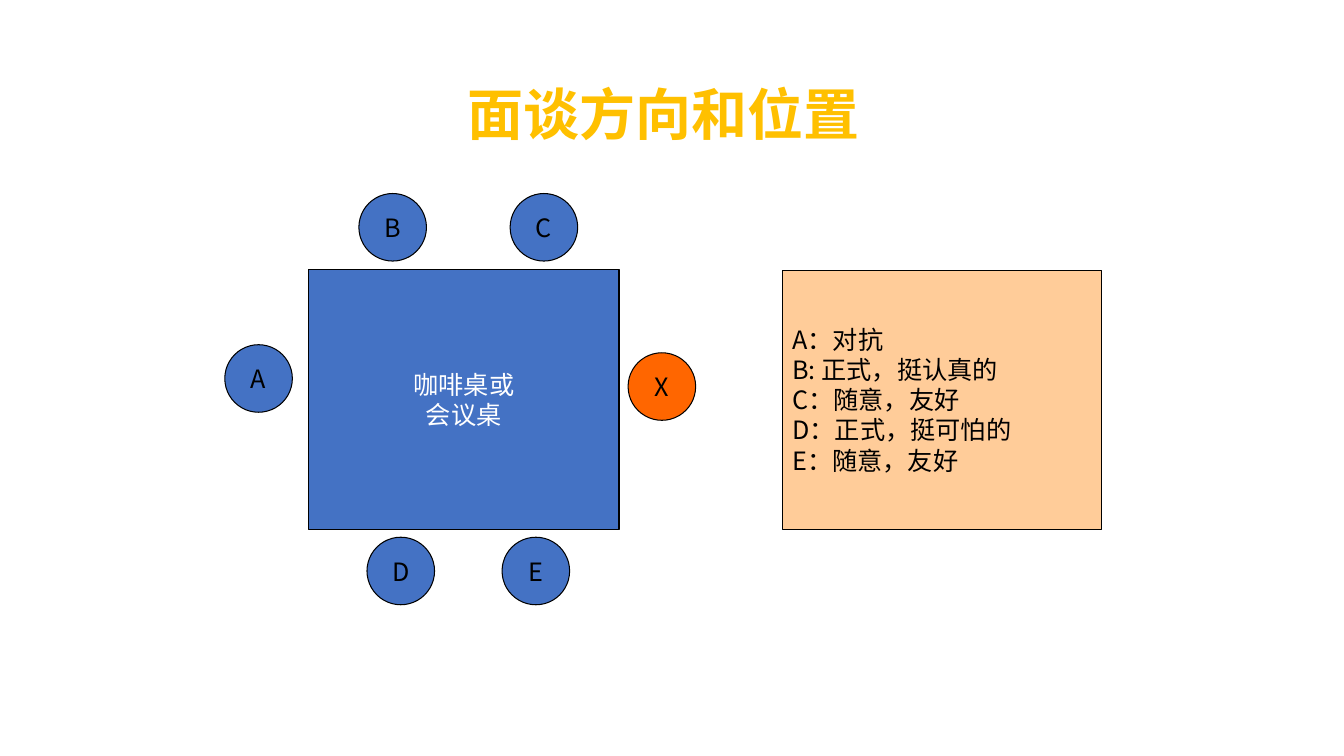
"""Build a slide of seats around a table and what each position conveys."""
from dataclasses import dataclass

import pptx
import pptx.dml.color
import pptx.enum.shapes
import pptx.enum.text
import pptx.oxml
import pptx.oxml.ns
import pptx.shapes.autoshape
import pptx.slide
import pptx.text.text
import pptx.util

EMU_PER_PX = 9144
FONT = "Noto Sans CJK SC"
BLACK, WHITE, GOLD = "000000", "FFFFFF", "FFC000"
BLUE, ORANGE, PEACH = "4472C4", "FF6600", "FFCC99"
SEAT_SIZE = 67
RECTANGLE = pptx.enum.shapes.MSO_SHAPE.RECTANGLE
OVAL = pptx.enum.shapes.MSO_SHAPE.OVAL
LEFT = pptx.enum.text.PP_ALIGN.LEFT
CENTER = pptx.enum.text.PP_ALIGN.CENTER


@dataclass(frozen=True)
class Block:
    text: str
    left: int
    top: int
    width: int = SEAT_SIZE
    height: int = SEAT_SIZE
    fill: str = BLUE
    text_color: str = BLACK
    kind: pptx.enum.shapes.MSO_SHAPE = OVAL
    alignment: pptx.enum.text.PP_ALIGN = CENTER


BLOCKS = [
    Block("A：对抗\nB: 正式，挺认真的\nC：随意，友好\nD：正式，挺可怕的\nE：随意，友好",
          776, 268, 317, 257, PEACH, kind=RECTANGLE, alignment=LEFT),
    Block("咖啡桌或\n会议桌", 306, 267, 308, 258, text_color=WHITE, kind=RECTANGLE),
    Block("A", 223, 342),
    Block("D", 364, 533),
    Block("E", 498, 533),
    Block("B", 356, 192),
    Block("C", 506, 192),
    Block("X", 623, 350, fill=ORANGE),
]


def px(length: int) -> pptx.util.Emu:
    return pptx.util.Emu(length * EMU_PER_PX)


def color(value: str) -> pptx.dml.color.RGBColor:
    return pptx.dml.color.RGBColor.from_string(value)


def format_text(frame: pptx.text.text.TextFrame, size: int, text_color: str,
                alignment: pptx.enum.text.PP_ALIGN, bold: bool = False) -> None:
    frame.vertical_anchor = pptx.enum.text.MSO_ANCHOR.MIDDLE
    for paragraph in frame.paragraphs:
        paragraph.alignment = alignment
        for run in paragraph.runs:
            run.font.size = pptx.util.Pt(size)
            run.font.bold = bold
            run.font.color.rgb = color(text_color)
            run.font.name = FONT
            east_asian = pptx.oxml.parse_xml(
                f'<a:ea {pptx.oxml.ns.nsdecls("a")} typeface="{FONT}"/>')
            run.font._element.append(east_asian)


def add_title(slide: pptx.slide.Slide, text: str) -> None:
    title = slide.shapes.title
    title.left, title.top, title.width, title.height = map(px, (233, 58, 850, 117))
    frame = title.text_frame
    frame.text = text
    frame.auto_size = pptx.enum.text.MSO_AUTO_SIZE.NONE
    frame.paragraphs[0].line_spacing = 0.9
    format_text(frame, 40, GOLD, CENTER, bold=True)


def add_block(slide: pptx.slide.Slide, block: Block) -> pptx.shapes.autoshape.Shape:
    shape = slide.shapes.add_shape(
        block.kind, px(block.left), px(block.top), px(block.width), px(block.height))
    shape.shadow.inherit = False
    shape.fill.solid()
    shape.fill.fore_color.rgb = color(block.fill)
    shape.line.color.rgb = color(BLACK)
    shape.line.width = pptx.util.Pt(0.75)
    shape.text_frame.text = block.text
    shape.text_frame.word_wrap = False
    format_text(shape.text_frame, 18, block.text_color, block.alignment)
    return shape


def main() -> None:
    presentation = pptx.Presentation()
    presentation.slide_width, presentation.slide_height = px(1333), px(750)
    slide = presentation.slides.add_slide(presentation.slide_layouts.get_by_name("Title Only"))
    add_title(slide, "面谈方向和位置")
    for block in BLOCKS:
        add_block(slide, block)
    presentation.save("out.pptx")


if __name__ == "__main__":
    main()
